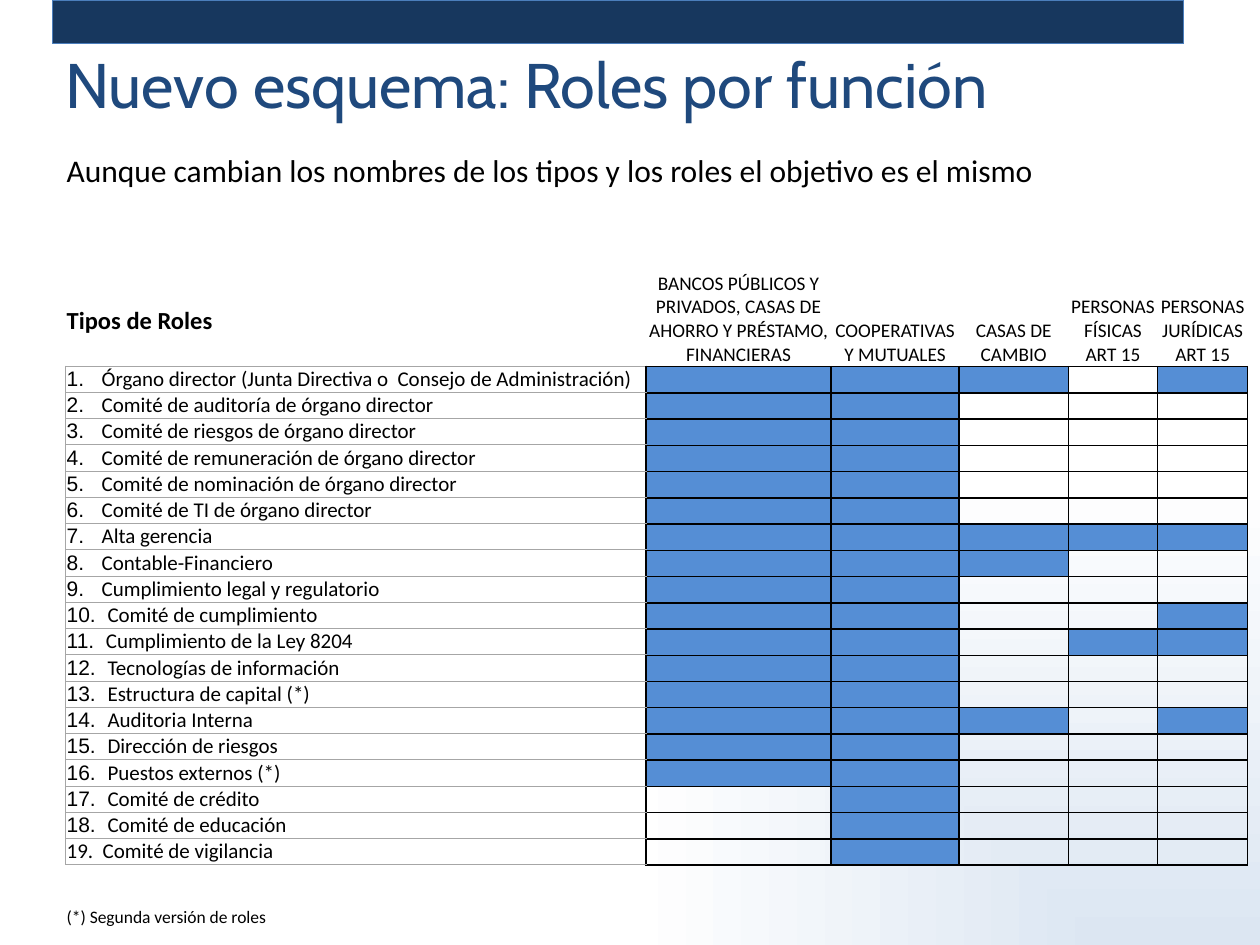
from dataclasses import dataclass

from lxml import etree
from pptx import Presentation
from pptx.dml.color import RGBColor
from pptx.enum import shapes, text
from pptx.oxml import ns
from pptx.util import Pt


@dataclass(frozen=True)
class Theme:
    navy: str = "17375E"
    bar_line: str = "4B7EBC"
    title: str = "1F497D"
    ink: str = "000000"
    mark: str = "558ED5"
    blank: str = "FFFFFF"
    rule: str = "A6A6A6"
    glow: str = "DCE6F2"
    title_font: str = "Cabin"
    body_font: str = "Calibri"
    number_font: str = "Arial"
    title_size: float = 36
    lead_size: float = 18
    heading_size: float = 14
    role_size: float = 12
    column_size: float = 11
    note_size: float = 10


THEME = Theme()
NBSP = chr(160)
NO_STYLE = "{2D5ABB26-0587-4C30-8999-92F81FD0307C}"
HEADER_HEIGHT, ROW_HEIGHT = 83.5, 15

ENTITIES = [  # heading, column width
    ("BANCOS PÚBLICOS Y PRIVADOS, CASAS DE AHORRO Y PRÉSTAMO, FINANCIERAS", 105.7),
    ("COOPERATIVAS Y MUTUALES", 73.2),
    ("CASAS DE CAMBIO", 62.4),
    ("PERSONAS FÍSICAS ART 15", 51.1),
    ("PERSONAS JURÍDICAS ART 15", 51.4),
]
ROLES = [  # role, one mark per entity: # filled, w white, . empty
    ("Órgano director (Junta Directiva o  Consejo de Administración)", "###w#"),
    ("Comité de auditoría de órgano director", "##..."),
    ("Comité de riesgos de órgano director", "##..."),
    ("Comité de remuneración de órgano director", "##..."),
    ("Comité de nominación de órgano director", "##..."),
    ("Comité de TI de órgano director", "##..."),
    ("Alta gerencia", "#####"),
    ("Contable-Financiero", "###.."),
    ("Cumplimiento legal y regulatorio", "##..."),
    ("Comité de cumplimiento", "##..#"),
    ("Cumplimiento de la Ley 8204", "##.##"),
    ("Tecnologías de información", "##..."),
    ("Estructura de capital (*)", "##..."),
    ("Auditoria Interna", "###.#"),
    ("Dirección de riesgos", "##..."),
    ("Puestos externos (*)", "##..."),
    ("Comité de crédito", ".#..."),
    ("Comité de educación", ".#..."),
    ("Comité de vigilancia", ".#..."),
]


def style(span, size, font=THEME.body_font, color=THEME.ink, bold=False):
    span.font.size = Pt(size)
    span.font.name = font
    span.font.bold = bold
    span.font.color.rgb = RGBColor.from_string(color)


def paint_background(page):
    fill = page.background.fill
    fill.gradient()
    for stop, color in zip(fill.gradient_stops, (THEME.glow, THEME.blank)):
        stop.color.rgb = RGBColor.from_string(color)
    linear = page._element.find(".//" + ns.qn("a:lin"))
    radial = etree.Element(ns.qn("a:path"), path="rect")
    etree.SubElement(radial, ns.qn("a:fillToRect"), l="100000", t="100000")
    linear.getparent().replace(linear, radial)


def add_bar(page):
    bar = page.shapes.add_shape(shapes.MSO_SHAPE.RECTANGLE,
                                Pt(30), Pt(0), Pt(646.5), Pt(25))
    bar.shadow.inherit = False
    bar.fill.solid()
    bar.fill.fore_color.rgb = RGBColor.from_string(THEME.navy)
    bar.line.color.rgb = RGBColor.from_string(THEME.bar_line)
    bar.line.width = Pt(0.75)


def set_title(page, words):
    title = page.shapes.title
    title.left, title.top, title.width, title.height = Pt(30), Pt(26), Pt(646.5), Pt(47)
    frame = title.text_frame
    frame.text = words
    frame.auto_size = text.MSO_AUTO_SIZE.NONE
    frame.vertical_anchor = text.MSO_ANCHOR.BOTTOM
    para = frame.paragraphs[0]
    para.alignment = text.PP_ALIGN.LEFT
    style(para.runs[0], THEME.title_size, THEME.title_font, THEME.title)


def add_text(page, words, left, top, width, height, size, wrap=True):
    box = page.shapes.add_textbox(Pt(left), Pt(top), Pt(width), Pt(height))
    frame = box.text_frame
    frame.text = words
    frame.word_wrap = wrap
    frame.auto_size = text.MSO_AUTO_SIZE.SHAPE_TO_FIT_TEXT
    style(frame.paragraphs[0].runs[0], size)


def add_grid(page, left, top, widths):
    height = HEADER_HEIGHT + ROW_HEIGHT * len(ROLES)
    frame = page.shapes.add_table(len(ROLES) + 1, len(widths), Pt(left), Pt(top),
                                  Pt(sum(widths)), Pt(height))
    grid = frame.table
    grid.first_row = grid.horz_banding = False
    grid._tbl.tblPr.find(ns.qn("a:tableStyleId")).text = NO_STYLE
    for column, width in zip(grid.columns, widths):
        column.width = Pt(width)
    for index, row in enumerate(grid.rows):
        row.height = Pt(ROW_HEIGHT if index else HEADER_HEIGHT)
    return grid


def format_cell(cell, borders, fill=None, anchor=text.MSO_ANCHOR.MIDDLE, bottom=0):
    """Borders map a side (L, R, T, B) to a colour and a width."""
    cell.margin_left = cell.margin_right = Pt(0.72)
    cell.margin_top, cell.margin_bottom = Pt(0.3), Pt(bottom)
    cell.vertical_anchor = anchor
    properties = cell._tc.get_or_add_tcPr()
    for side in "LRTB":
        color, width = borders.get(side, (None, 0))
        line = etree.SubElement(properties, ns.qn("a:ln" + side), w=str(Pt(width)))
        if color:
            solid = etree.SubElement(line, ns.qn("a:solidFill"))
            etree.SubElement(solid, ns.qn("a:srgbClr"), val=color)
        else:
            etree.SubElement(line, ns.qn("a:noFill"))
    if fill:
        cell.fill.solid()
        cell.fill.fore_color.rgb = RGBColor.from_string(fill)
    else:
        cell.fill.background()


def add_matrix(page):
    grid = add_grid(page, 369.2, 126, [width for _, width in ENTITIES])
    line = (THEME.ink, 1)
    fills = {"#": THEME.mark, "w": THEME.blank}
    for column, (heading, _) in enumerate(ENTITIES):
        cell = grid.cell(0, column)
        cell.text = heading
        para = cell.text_frame.paragraphs[0]
        para.alignment = text.PP_ALIGN.CENTER
        style(para.runs[0], THEME.column_size)
        format_cell(cell, {"B": line}, anchor=text.MSO_ANCHOR.BOTTOM)
        for row, (_, marks) in enumerate(ROLES, 1):
            cell = grid.cell(row, column)
            format_cell(cell, dict.fromkeys("LRTB", line), fills.get(marks[column]))
            # An empty cell keeps its row low only with a small end mark
            etree.SubElement(cell.text_frame.paragraphs[0]._p, ns.qn("a:endParaRPr"),
                             sz=str(int(THEME.column_size * 100)))


def add_role_list(page):
    grid = add_grid(page, 37.4, 125.6, [331.8])
    line = (THEME.rule, 0.25)
    borders = {"L": line, "T": line, "R": (THEME.ink, 1), "B": line}
    head = grid.cell(0, 0)
    head.text = "Tipos de Roles"
    style(head.text_frame.paragraphs[0].runs[0], THEME.heading_size, bold=True)
    format_cell(head, {"B": line}, anchor=text.MSO_ANCHOR.BOTTOM, bottom=17)
    for row, (role, _) in enumerate(ROLES, 1):
        cell = grid.cell(row, 0)
        last = row == len(ROLES)
        gap = "  " if last else NBSP * 2 + (" " if row < 10 else "")
        para = cell.text_frame.paragraphs[0]
        for words, font in ((f"{row}.{gap}", THEME.body_font if last else THEME.number_font),
                            (role, THEME.body_font)):
            span = para.add_run()
            span.text = words
            style(span, THEME.role_size, font)
        format_cell(cell, borders)


def main():
    deck = Presentation()
    deck.slide_width, deck.slide_height = Pt(720), Pt(540)
    page = deck.slides.add_slide(deck.slide_layouts[5])
    paint_background(page)
    # Heading
    add_bar(page)
    set_title(page, "Nuevo esquema: Roles por función")
    add_text(page, "Aunque cambian los nombres de los tipos y los roles el objetivo es el mismo" + NBSP,
             31, 83, 618, 29, THEME.lead_size)
    # Roles by kind of entity
    add_matrix(page)
    add_role_list(page)
    # Footnote
    add_text(page, "(*) Segunda versión de roles", 31, 514, 130, 19.4, THEME.note_size, wrap=False)
    deck.save("out.pptx")


if __name__ == "__main__":
    main()
